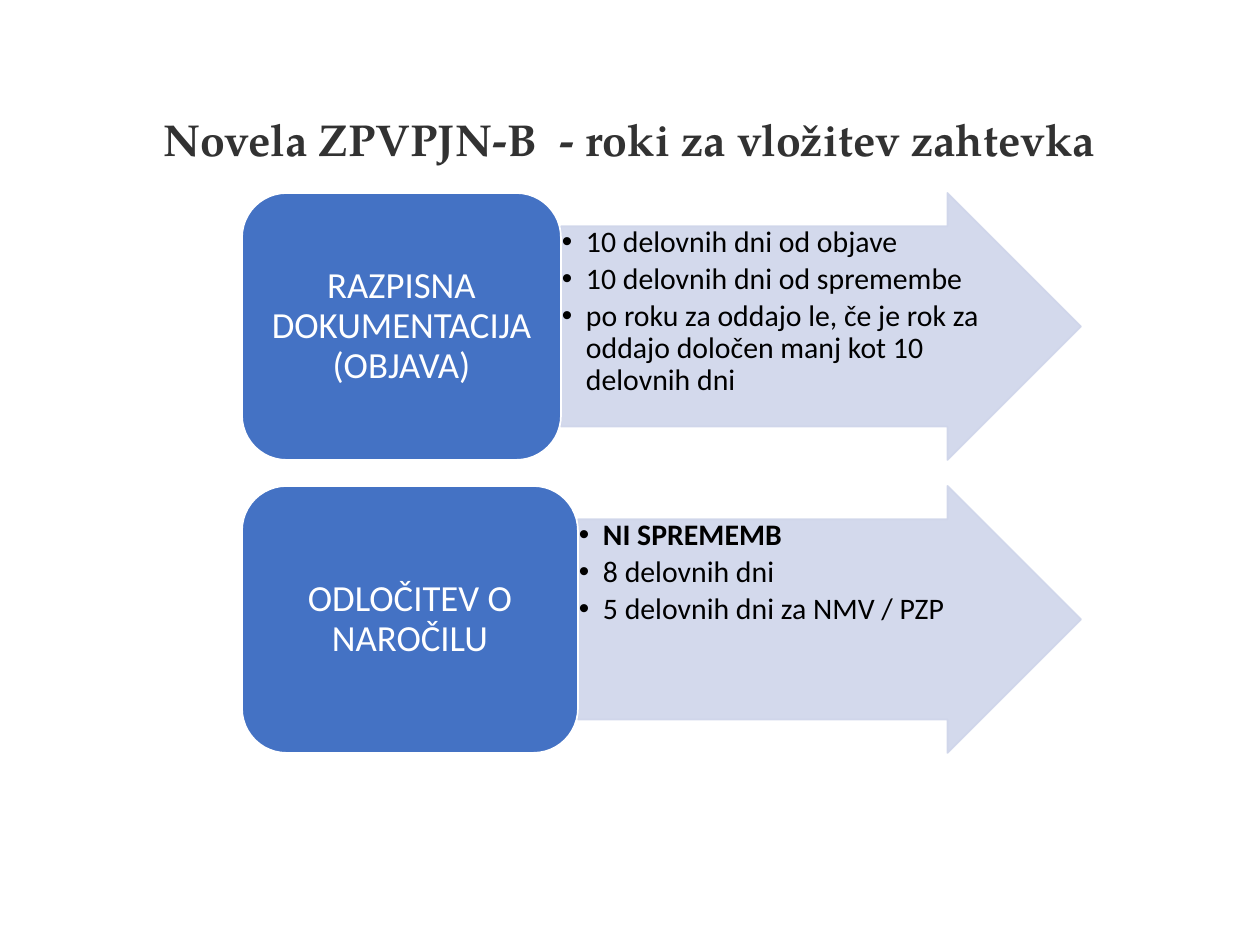
"""Build the slide on deadlines for filing a review request."""
from dataclasses import dataclass

from lxml import etree
from pptx import Presentation, util as u
from pptx.dml.color import RGBColor
from pptx.enum import shapes, text
from pptx.oxml import ns

PX = u.Inches(1) // 126


@dataclass(frozen=True)
class Theme:
    title_font: str = "TeX Gyre Pagella"
    body_font: str = "Calibri"
    title_size: float = 25.5
    label_size: float = 21
    bullet_size: float = 17
    bullet_gap: float = 2.6
    line_spacing: float = 0.9
    title: str = "323232"
    label: str = "FFFFFF"
    bullet: str = "000000"
    block: str = "4472C4"
    arrow: str = "CFD5EA"
    arrow_alpha: int = 90


@dataclass(frozen=True)
class Row:
    label: str
    label_width: int
    bullets: tuple[str, ...]
    bold_bullets: tuple[str, ...] = ()


THEME = Theme()
LEFT, RIGHT, TOP, HEIGHT, PITCH = 242, 1081, 193, 267, 293
INDENT = 24
ROWS = (
    Row("RAZPISNA DOKUMENTACIJA (OBJAVA)", 319, (
        "10 delovnih dni od objave",
        "10 delovnih dni od spremembe",
        "po roku za oddajo le, če je rok za oddajo določen manj kot 10 delovnih dni",
    )),
    Row("ODLOČITEV O NAROČILU", 336, (
        "NI SPREMEMB",
        "8 delovnih dni",
        "5 delovnih dni za NMV / PZP",
    ), bold_bullets=("NI SPREMEMB",)),
)


def px(*lengths: int) -> list[int]:
    """Turn pixel lengths into EMU."""
    return [length * PX for length in lengths]


def set_frame(frame, anchor, side: int, end: int) -> None:
    """Set wrapping, anchor and insets of a text frame."""
    frame.word_wrap = True
    frame.vertical_anchor = anchor
    frame.margin_left = frame.margin_right = side * PX
    frame.margin_top = frame.margin_bottom = end * PX


def style_para(para, align, font: str, size: float, color: str, bold: bool = False) -> None:
    """Format a paragraph and its runs."""
    para.alignment = align
    para.line_spacing = THEME.line_spacing
    for span in para.runs:
        span.font.name = font
        span.font.size = u.Pt(size)
        span.font.bold = bold
        span.font.color.rgb = RGBColor.from_string(color)


def add_bullet(para) -> None:
    """Give a paragraph a hanging bullet."""
    props = para._p.get_or_add_pPr()
    props.set("marL", str(INDENT * PX))
    props.set("indent", str(-INDENT * PX))
    etree.SubElement(props, ns.qn("a:buFont"), typeface="Arial")
    etree.SubElement(props, ns.qn("a:buChar"), char="•")


def add_box(page, kind, bounds: tuple[int, ...], fill: str, line: str):
    """Draw a filled preset shape without shadow."""
    box = page.shapes.add_shape(kind, *px(*bounds))
    box.shadow.inherit = False
    box.fill.solid()
    box.fill.fore_color.rgb = RGBColor.from_string(fill)
    box.line.color.rgb = RGBColor.from_string(line)
    box.line.width = u.Pt(1)
    return box


def add_arrow(page, row: Row, top: int) -> None:
    """Draw the translucent arrow with its bullet list."""
    left = LEFT + row.label_width
    box = add_box(page, shapes.MSO_SHAPE.RIGHT_ARROW,
                  (left, top, RIGHT - left, HEIGHT), THEME.arrow, THEME.arrow)
    box.adjustments[0] = 0.75
    for color in box._element.spPr.iter(ns.qn("a:srgbClr")):
        etree.SubElement(color, ns.qn("a:alpha"), val=str(THEME.arrow_alpha * 1000))
    frame = box.text_frame
    set_frame(frame, text.MSO_ANCHOR.TOP, 1, 1)
    frame.text = "\n".join(row.bullets)
    for para in frame.paragraphs:
        add_bullet(para)
        style_para(para, text.PP_ALIGN.LEFT, THEME.body_font, THEME.bullet_size,
                   THEME.bullet, para.text in row.bold_bullets)
        para.space_after = u.Pt(THEME.bullet_gap)


def add_label(page, row: Row, top: int) -> None:
    """Draw the rounded block that names a row."""
    box = add_box(page, shapes.MSO_SHAPE.ROUNDED_RECTANGLE,
                  (LEFT, top, row.label_width, HEIGHT), THEME.block, THEME.label)
    set_frame(box.text_frame, text.MSO_ANCHOR.MIDDLE, 11, 5)
    box.text_frame.text = row.label
    style_para(box.text_frame.paragraphs[0], text.PP_ALIGN.CENTER,
               THEME.body_font, THEME.label_size, THEME.label)


def add_title(page, wording: str) -> None:
    """Write the slide title."""
    box = page.shapes.add_textbox(*px(87, 50, 1086, 183))
    set_frame(box.text_frame, text.MSO_ANCHOR.MIDDLE, 12, 6)
    box.text_frame.text = wording
    style_para(box.text_frame.paragraphs[0], text.PP_ALIGN.CENTER,
               THEME.title_font, THEME.title_size, THEME.title, bold=True)


def main() -> None:
    """Build and save the deck."""
    deck = Presentation()
    deck.slide_width, deck.slide_height = px(1260, 945)
    page = deck.slides.add_slide(deck.slide_layouts[6])
    add_title(page, "Novela ZPVPJN-B  - roki za vložitev zahtevka")
    for index, row in enumerate(ROWS):
        top = TOP + index * PITCH
        add_arrow(page, row, top)
        add_label(page, row, top)
    deck.save("out.pptx")


if __name__ == "__main__":
    main()
